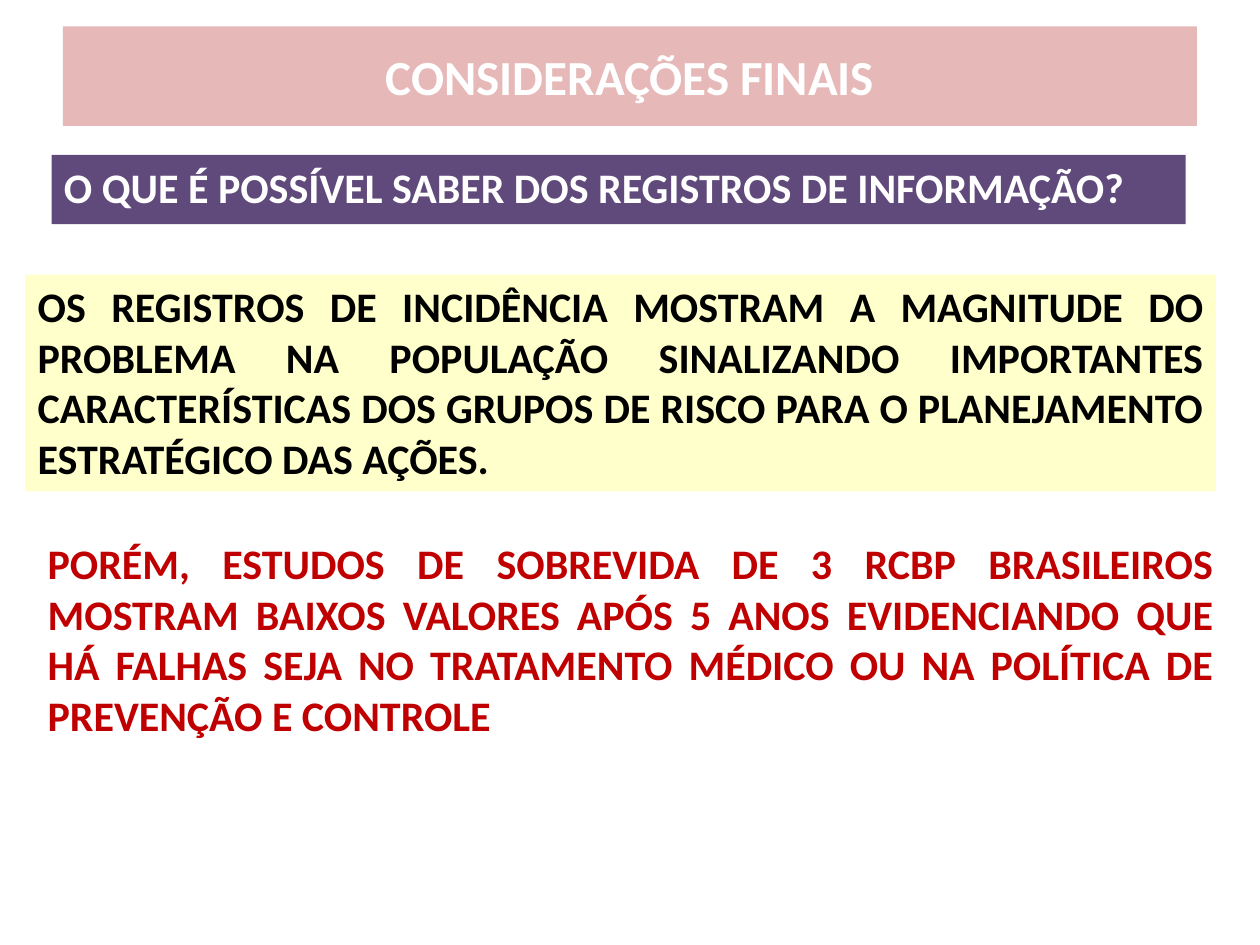
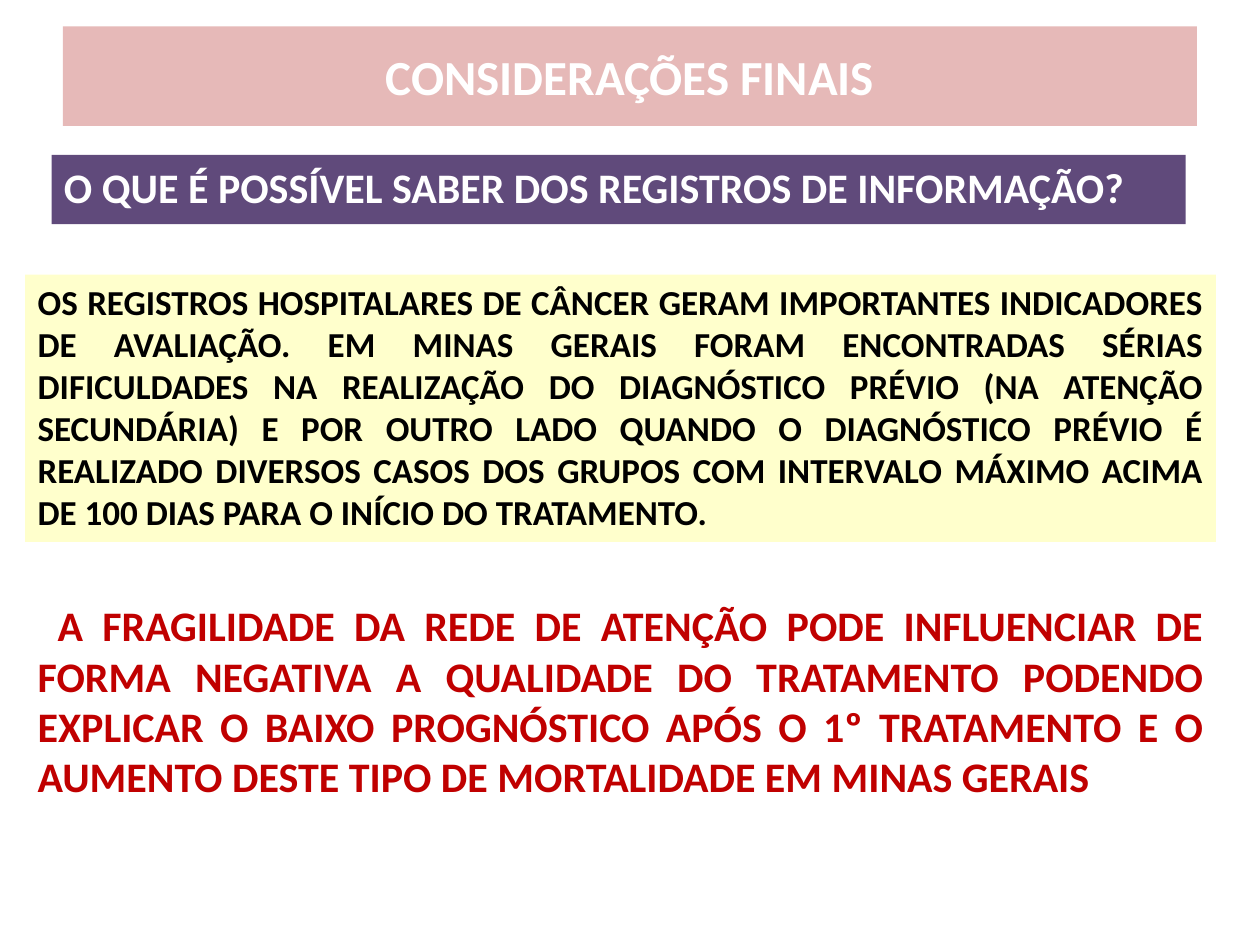
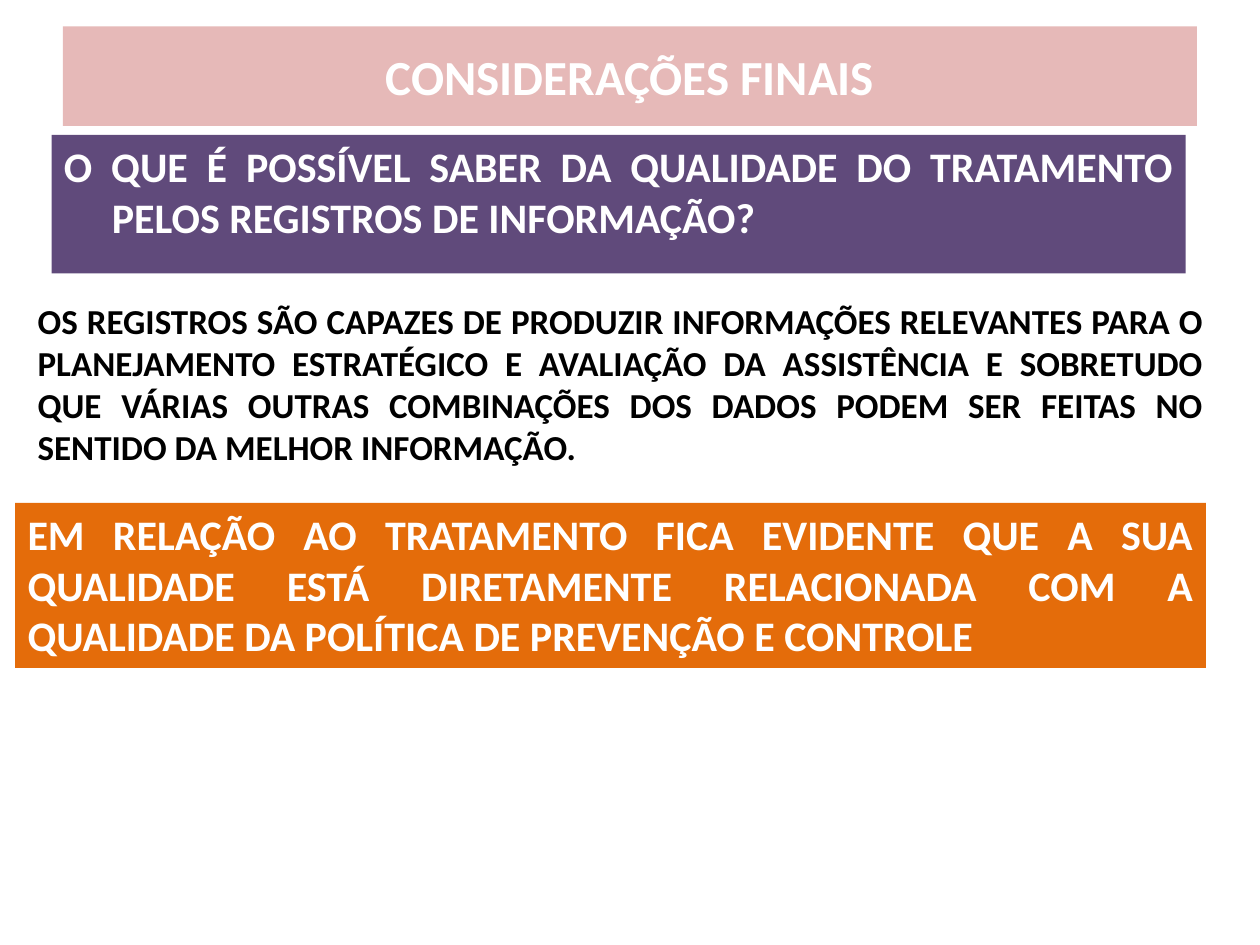
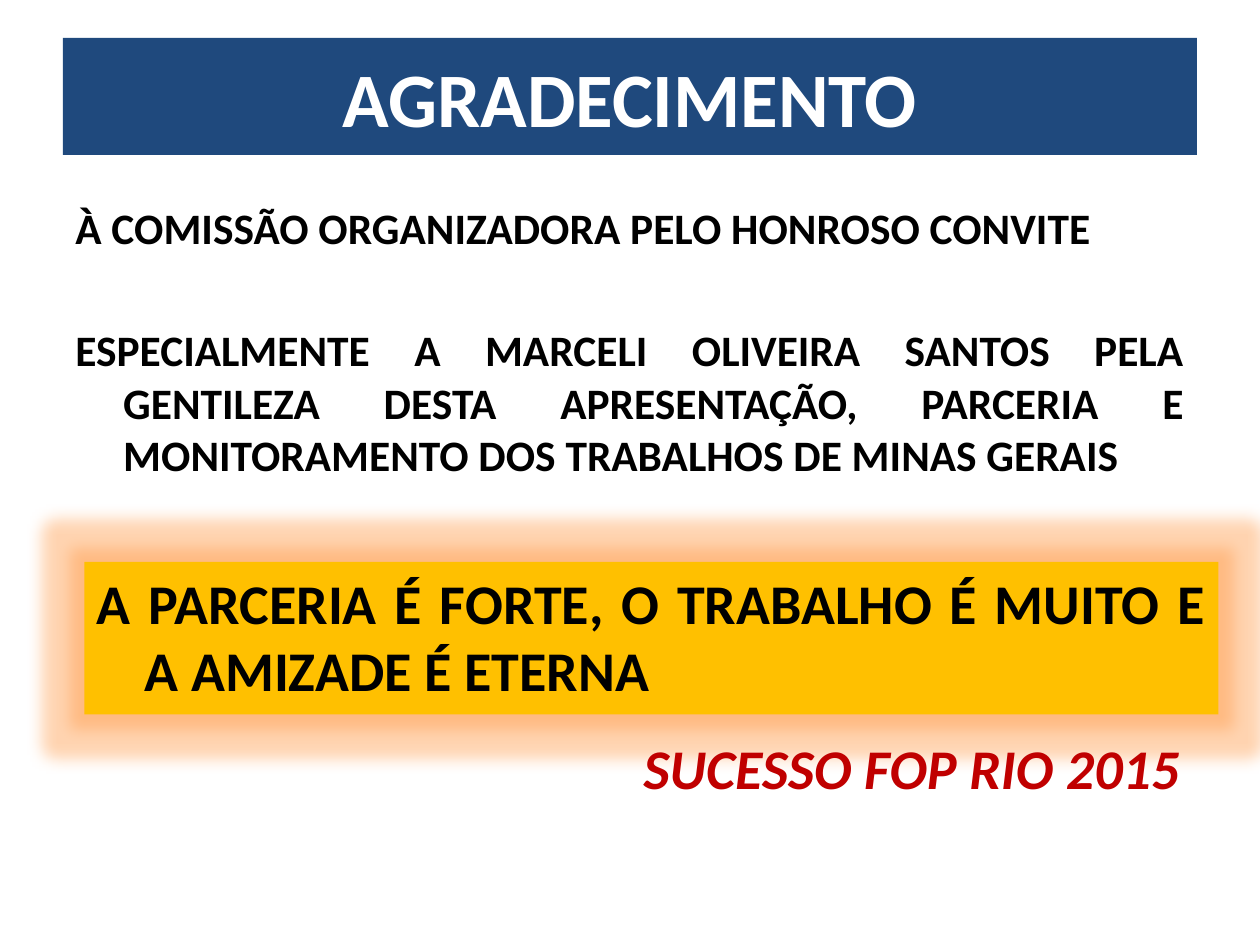
import dataclasses

import lxml.etree
import pptx
import pptx.dml.color
import pptx.enum.shapes
import pptx.enum.text
import pptx.oxml.ns
import pptx.util

Inches = pptx.util.Inches
Align = pptx.enum.text.PP_ALIGN
Anchor = pptx.enum.text.MSO_ANCHOR


@dataclasses.dataclass(frozen=True)
class Theme:
    font: str = "Calibri"
    white: str = "FFFFFF"
    black: str = "000000"
    red: str = "C00000"
    pink: str = "E6B9B8"
    purple: str = "604A7B"
    cream: str = "FFFFCC"
    orange: str = "E46C0A"
    navy: str = "1F497D"
    gold: str = "FFC000"
    glow: str = "F79646"
    small: float = 20
    body: float = 24
    note: float = 24.8
    head: float = 28
    large: float = 32
    huge: float = 44


@dataclasses.dataclass(frozen=True)
class Box:
    left: float
    top: float
    width: float
    height: float

    def inner(self, left, top, width, height):
        return Box(self.left + left, self.top + top, width, height)

    def sides(self):
        return [Inches(n) for n in (self.left, self.top, self.width, self.height)]


theme = Theme()
page = Box(0, 0, 10, 7.5)
hang = (0.38, -0.38)


def rgb(code):
    return pptx.dml.color.RGBColor.from_string(code)


def panel(slide, box, fill, texts, color, size, align=Align.JUSTIFY,
          anchor=Anchor.TOP, indent=(0, 0), gap=0, italic=False):
    if fill:
        kind = pptx.enum.shapes.MSO_SHAPE.RECTANGLE
        shape = slide.shapes.add_shape(kind, *box.sides())
        shape.shadow.inherit = False
        shape.fill.solid()
        shape.fill.fore_color.rgb = rgb(fill)
        shape.line.fill.background()
    else:
        shape = slide.shapes.add_textbox(*box.sides())
    frame = shape.text_frame
    frame.word_wrap = True
    frame.vertical_anchor = anchor
    for i, text in enumerate(texts):
        para = frame.paragraphs[0] if i == 0 else frame.add_paragraph()
        para.alignment = align
        props = para._p.get_or_add_pPr()
        props.set("marL", str(Inches(indent[0])))
        props.set("indent", str(Inches(indent[1])))
        if i:
            para.space_before = pptx.util.Pt(gap)
        run = para.add_run()
        run.text = text
        font = run.font
        font.name = theme.font
        font.size = pptx.util.Pt(size)
        font.bold = True
        font.italic = italic
        font.color.rgb = rgb(color)
    return shape


def title(slide, box, text, fill, size):
    panel(slide, box, fill, [text], theme.white, size, Align.CENTER,
          Anchor.MIDDLE)


def halo(shape, color, radius):
    tag = pptx.oxml.ns.qn
    effects = shape._element.spPr.find(tag("a:effectLst"))
    glow = lxml.etree.SubElement(effects, tag("a:glow"), rad=str(Inches(radius)))
    paint = lxml.etree.SubElement(glow, tag("a:srgbClr"), val=color)
    lxml.etree.SubElement(paint, tag("a:satMod"), val="175000")
    lxml.etree.SubElement(paint, tag("a:alpha"), val="40000")


def finding(slide, box, ask, band, blocks):
    title(slide, box.inner(0.5, 0.21, 9, 0.79), "CONSIDERAÇÕES FINAIS",
          theme.pink, theme.head)
    top, height = band
    panel(slide, box.inner(0.41, top, 9, height), theme.purple, [ask],
          theme.white, theme.body, indent=hang)
    for left, top, height, fill, color, size, first, text in blocks:
        panel(slide, box.inner(left, top, 9.45, height), fill, [text],
              color, size, indent=(0, first))


def thanks(slide, box):
    title(slide, box.inner(0.5, 0.3, 9, 0.93), "AGRADECIMENTO",
          theme.navy, theme.huge)
    panel(slide, box.inner(0.5, 1.55, 9, 2.55), theme.white, [
        "À COMISSÃO ORGANIZADORA PELO HONROSO CONVITE",
        "ESPECIALMENTE A MARCELI OLIVEIRA SANTOS PELA GENTILEZA DESTA "
        "APRESENTAÇÃO, PARCERIA E MONITORAMENTO DOS TRABALHOS DE MINAS GERAIS",
    ], theme.black, theme.note, indent=hang, gap=40)
    motto = panel(slide, box.inner(0.67, 4.46, 9, 1.21), theme.gold,
                  ["A PARCERIA É FORTE, O TRABALHO É MUITO E A AMIZADE É ETERNA"],
                  theme.black, theme.large, indent=hang)
    halo(motto, theme.glow, 0.25)
    panel(slide, box.inner(5.01, 5.77, 4.56, 0.66), None,
          ["SUCESSO FOP RIO 2015"], theme.red, theme.large, indent=hang,
          italic=True)


known = "O QUE É POSSÍVEL SABER DOS REGISTROS DE INFORMAÇÃO?"
cared = ("O QUE É POSSÍVEL SABER DA QUALIDADE DO TRATAMENTO PELOS REGISTROS "
         "DE INFORMAÇÃO?")

points = [
    (known, (1.23, 0.55), [
        (0.2, 2.18, 1.72, theme.cream, theme.black, theme.body, 0,
         "OS REGISTROS DE INCIDÊNCIA MOSTRAM A MAGNITUDE DO PROBLEMA NA "
         "POPULAÇÃO SINALIZANDO IMPORTANTES CARACTERÍSTICAS DOS GRUPOS DE "
         "RISCO PARA O PLANEJAMENTO ESTRATÉGICO DAS AÇÕES."),
        (0.28, 4.22, 2.12, theme.white, theme.red, theme.body, 0,
         "PORÉM, ESTUDOS DE SOBREVIDA DE 3 RCBP BRASILEIROS MOSTRAM BAIXOS "
         "VALORES APÓS 5 ANOS EVIDENCIANDO QUE HÁ FALHAS SEJA NO TRATAMENTO "
         "MÉDICO OU NA POLÍTICA DE PREVENÇÃO E CONTROLE"),
    ]),
    (known, (1.23, 0.55), [
        (0.2, 2.18, 2.12, theme.cream, theme.black, theme.small, 0,
         "OS REGISTROS HOSPITALARES DE CÂNCER GERAM IMPORTANTES INDICADORES "
         "DE AVALIAÇÃO. EM MINAS GERAIS FORAM ENCONTRADAS SÉRIAS DIFICULDADES "
         "NA REALIZAÇÃO DO DIAGNÓSTICO PRÉVIO (NA ATENÇÃO SECUNDÁRIA) E POR "
         "OUTRO LADO QUANDO O DIAGNÓSTICO PRÉVIO É REALIZADO DIVERSOS CASOS "
         "DOS GRUPOS COM INTERVALO MÁXIMO ACIMA DE 100 DIAS PARA O INÍCIO DO "
         "TRATAMENTO."),
        (0.2, 4.71, 1.72, theme.white, theme.red, theme.body, 0.16,
         "A FRAGILIDADE DA REDE DE ATENÇÃO PODE INFLUENCIAR DE FORMA NEGATIVA "
         "A QUALIDADE DO TRATAMENTO PODENDO EXPLICAR O BAIXO PROGNÓSTICO APÓS "
         "O 1º TRATAMENTO E O AUMENTO DESTE TIPO DE MORTALIDADE EM MINAS "
         "GERAIS"),
    ]),
    (cared, (1.07, 1.1), [
        (0.2, 2.33, 1.45, theme.white, theme.black, theme.small, 0,
         "OS REGISTROS SÃO CAPAZES DE PRODUZIR INFORMAÇÕES RELEVANTES PARA O "
         "PLANEJAMENTO ESTRATÉGICO E AVALIAÇÃO DA ASSISTÊNCIA E SOBRETUDO QUE "
         "VÁRIAS OUTRAS COMBINAÇÕES DOS DADOS PODEM SER FEITAS NO SENTIDO DA "
         "MELHOR INFORMAÇÃO."),
        (0.12, 3.99, 1.31, theme.orange, theme.white, theme.body, 0,
         "EM RELAÇÃO AO TRATAMENTO FICA EVIDENTE QUE A SUA QUALIDADE ESTÁ "
         "DIRETAMENTE RELACIONADA COM A QUALIDADE DA POLÍTICA DE PREVENÇÃO E "
         "CONTROLE"),
    ]),
]


def main():
    deck = pptx.Presentation()
    deck.slide_width = Inches(page.width)
    deck.slide_height = Inches(page.height)
    blank = deck.slide_layouts[6]
    for point in points:
        finding(deck.slides.add_slide(blank), page, *point)
    thanks(deck.slides.add_slide(blank), page)
    deck.save("out.pptx")


if __name__ == "__main__":
    main()
